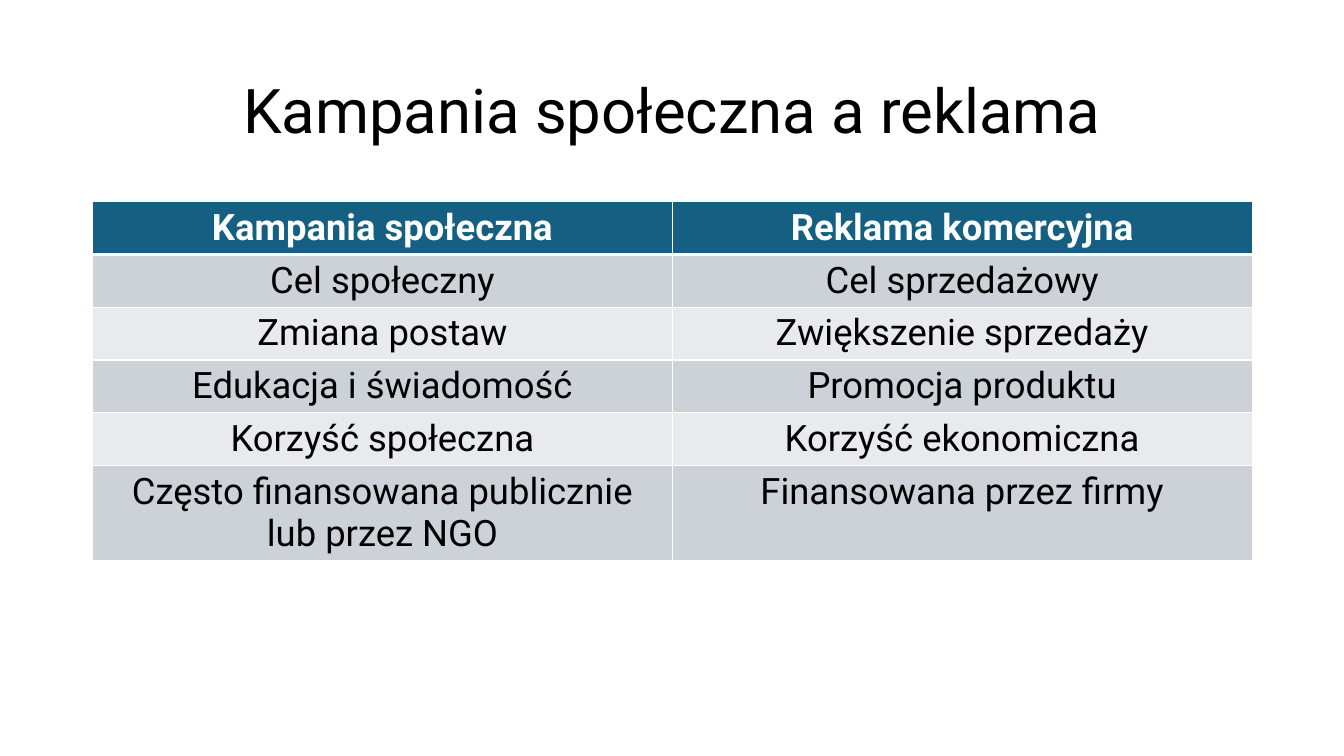
from dataclasses import dataclass

from lxml.etree import SubElement
from pptx import Presentation
from pptx.dml.color import RGBColor
from pptx.enum.text import MSO_ANCHOR, PP_ALIGN
from pptx.oxml.ns import qn
from pptx.util import Inches, Pt

TITLE = "Kampania społeczna a reklama"
ROWS = [
    ("Kampania społeczna", "Reklama komercyjna"),
    ("Cel społeczny", "Cel sprzedażowy"),
    ("Zmiana postaw", "Zwiększenie sprzedaży"),
    ("Edukacja i świadomość", "Promocja produktu"),
    ("Korzyść społeczna", "Korzyść ekonomiczna"),
    ("Często finansowana publicznie lub przez NGO", "Finansowana przez firmy"),
]


@dataclass(frozen=True)
class Theme:
    font: str = "Roboto"
    title_size: int = 44
    cell_size: int = 26
    text: str = "000000"
    light: str = "FFFFFF"
    header: str = "156082"
    bands: tuple = ("E8EAED", "CCD2D8")
    rule: int = 1
    header_rule: int = 3


THEME = Theme()
LEFT, WIDTH = 0.92, 11.5
TITLE_TOP, TITLE_HEIGHT = 0.4, 1.45
TABLE_TOP, ROW_HEIGHT = 2, 0.41


def write(tf, text, size, color=THEME.text, bold=False, spacing=None):
    p = tf.paragraphs[0]
    p.alignment = PP_ALIGN.CENTER
    p.line_spacing = spacing
    r = p.add_run()
    r.text = text
    r.font.name = THEME.font
    r.font.size = Pt(size)
    r.font.bold = bold
    r.font.color.rgb = RGBColor.from_string(color)


def add_borders(cell, top, bottom):
    tc_pr = cell._tc.get_or_add_tcPr()
    widths = {"lnL": THEME.rule, "lnR": THEME.rule, "lnT": top, "lnB": bottom}
    for side, width in widths.items():
        ln = SubElement(tc_pr, qn(f"a:{side}"), w=str(Pt(width)))
        fill = SubElement(ln, qn("a:solidFill"))
        SubElement(fill, qn("a:srgbClr"), val=THEME.light)


def add_title(s):
    title = s.shapes.title
    title.left, title.top = Inches(LEFT), Inches(TITLE_TOP)
    title.width, title.height = Inches(WIDTH), Inches(TITLE_HEIGHT)
    tf = title.text_frame
    tf.word_wrap = True
    tf.vertical_anchor = MSO_ANCHOR.MIDDLE
    write(tf, TITLE, THEME.title_size, spacing=0.9)


def add_comparison(s):
    table = s.shapes.add_table(
        len(ROWS), len(ROWS[0]), Inches(LEFT), Inches(TABLE_TOP),
        Inches(WIDTH), Inches(ROW_HEIGHT * len(ROWS)),
    ).table
    for i, row in enumerate(ROWS):
        is_header = i == 0
        color = THEME.light if is_header else THEME.text
        fill = THEME.header if is_header else THEME.bands[i % 2]
        top = THEME.header_rule if i == 1 else THEME.rule
        bottom = THEME.header_rule if is_header else THEME.rule
        for j, text in enumerate(row):
            cell = table.cell(i, j)
            add_borders(cell, top, bottom)
            cell.fill.solid()
            cell.fill.fore_color.rgb = RGBColor.from_string(fill)
            write(cell.text_frame, text, THEME.cell_size, color, is_header)


def main():
    prs = Presentation()
    prs.slide_width, prs.slide_height = Inches(13.33), Inches(7.5)
    s = prs.slides.add_slide(prs.slide_layouts[5])
    add_title(s)
    add_comparison(s)
    prs.save("out.pptx")


if __name__ == "__main__":
    main()
